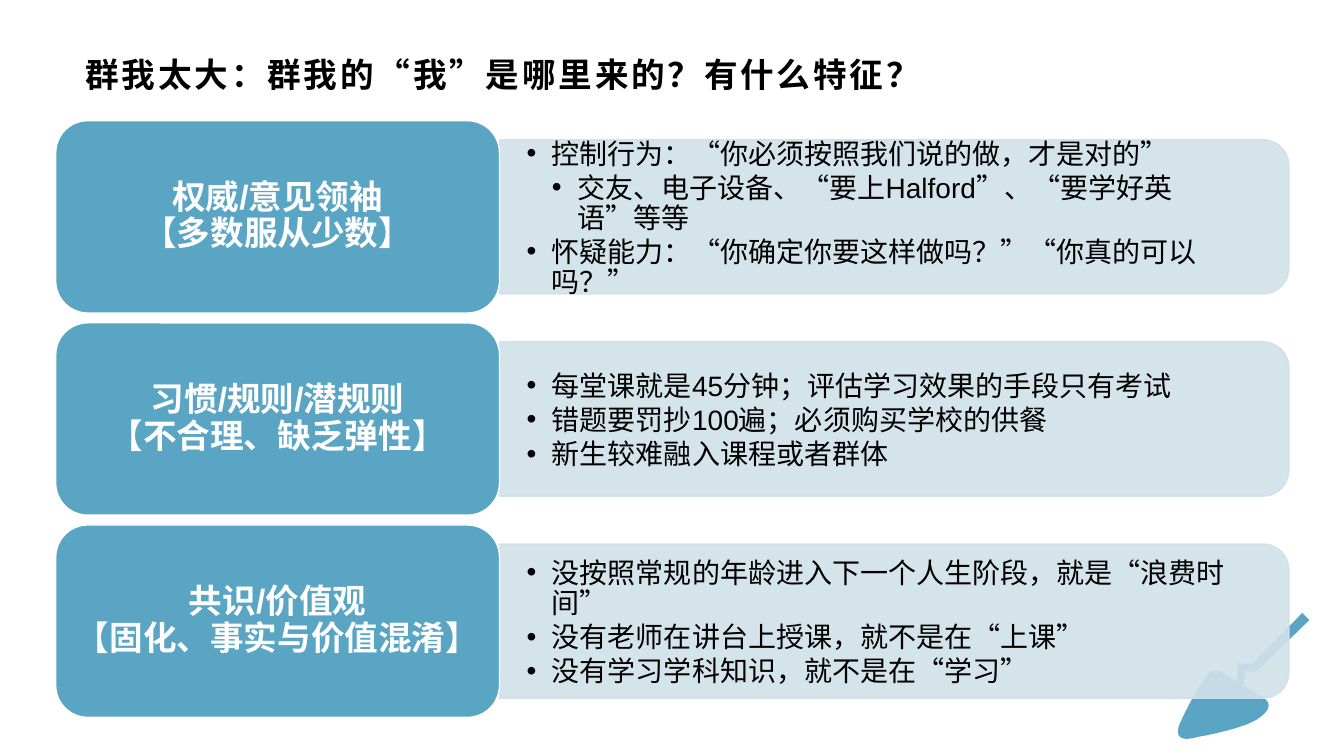
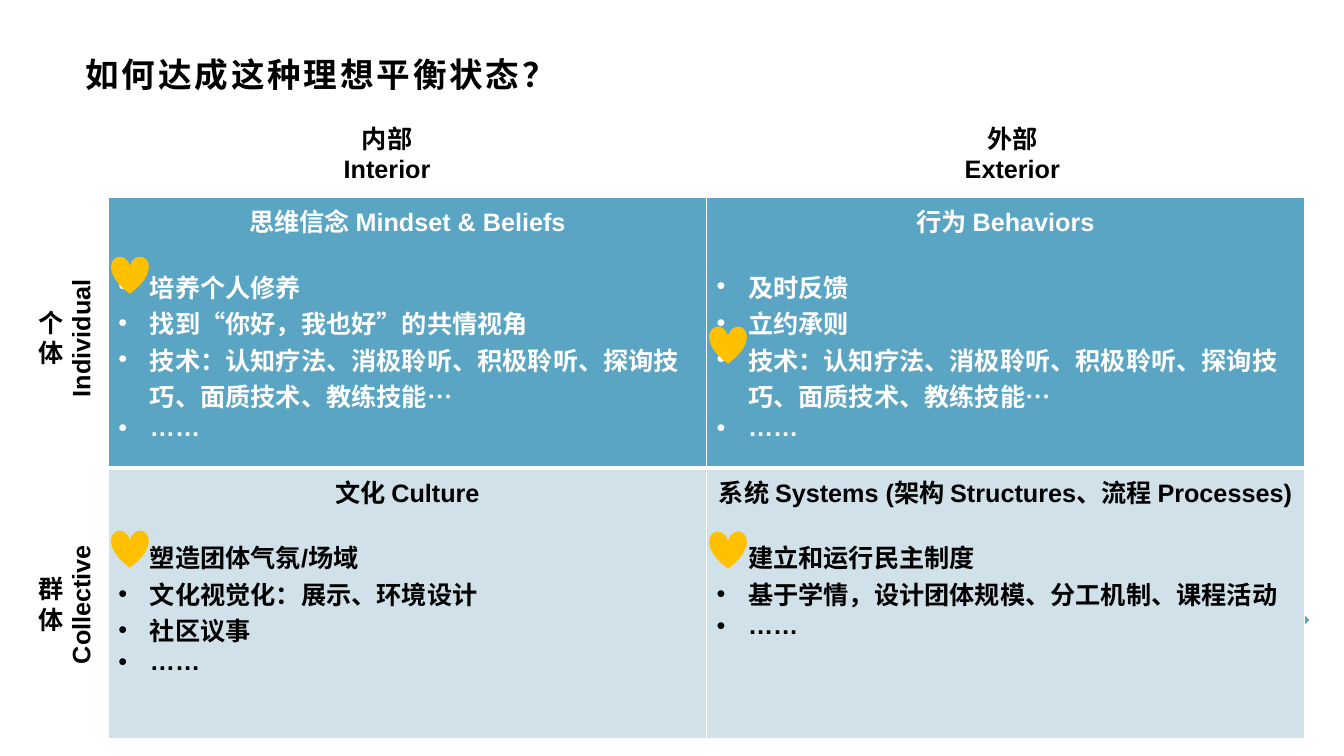
from dataclasses import dataclass
from lxml import etree
from pptx import Presentation
from pptx.dml.color import RGBColor
from pptx.enum.shapes import MSO_SHAPE
from pptx.enum.text import MSO_ANCHOR, MSO_AUTO_SIZE, PP_ALIGN
from pptx.oxml.ns import qn
from pptx.util import Pt

ROUND, PANEL, HEART = (MSO_SHAPE.ROUNDED_RECTANGLE,
                       MSO_SHAPE.ROUND_2_SAME_RECTANGLE, MSO_SHAPE.HEART)
MID, TOP = MSO_ANCHOR.MIDDLE, MSO_ANCHOR.TOP
LEFT, CENTER = PP_ALIGN.LEFT, PP_ALIGN.CENTER
FIXED = MSO_AUTO_SIZE.NONE


@dataclass(frozen=True)
class Theme:
    font: str = "Arial"
    lang: str = "zh-CN"
    blue: str = "59A5C3"
    pale: str = "D1E1E9"
    gold: str = "FFC000"
    white: str = "FFFFFF"
    black: str = "000000"
    head: int = 24
    body: int = 20
    cell: int = 18


T = Theme()

SOURCES = {
    "title": "群我太大：群我的“我”是哪里来的？有什么特征？",
    "rows": [
        ("权威/意见领袖\v【多数服从少数】", [
            (1, "控制行为：“你必须按照我们说的做，才是对的”"),
            (2, "交友、电子设备、“要上Halford”、“要学好英语”等等"),
            (1, "怀疑能力：“你确定你要这样做吗？”“你真的可以吗？”")]),
        ("习惯/规则/潜规则\v【不合理、缺乏弹性】", [
            (1, "每堂课就是45分钟；评估学习效果的手段只有考试"),
            (1, "错题要罚抄100遍；必须购买学校的供餐"),
            (1, "新生较难融入课程或者群体")]),
        ("共识/价值观\v【固化、事实与价值混淆】", [
            (1, "没按照常规的年龄进入下一个人生阶段，就是“浪费时间”"),
            (1, "没有老师在讲台上授课，就不是在“上课”"),
            (1, "没有学习学科知识，就不是在“学习”")]),
    ],
}

SKILLS = "技术：认知疗法、消极聆听、积极聆听、探询技巧、面质技术、教练技能…"
BALANCE = {
    "title": "如何达成这种理想平衡状态？",
    "cols": [("内部", "Interior"), ("外部", "Exterior")],
    "rows": [("个", "体", "Individual"), ("群", "体", "Collective")],
    "cells": [
        [("思维信念 Mindset & Beliefs",
          ["培养个人修养", "找到“你好，我也好”的共情视角", SKILLS, "……"]),
         ("行为 Behaviors",
          ["及时反馈", "立约承则", SKILLS, "……"])],
        [("文化 Culture",
          ["塑造团体气氛/场域", "文化视觉化：展示、环境设计", "社区议事", "……"]),
         ("系统 Systems (架构 Structures、流程 Processes)",
          ["建立和运行民主制度", "基于学情，设计团体规模、分工机制、课程活动", "……"])],
    ],
    "hearts": [(183, 233), (378.7, 379.4)],
}

# Each blade step is (control, end); a step without control is straight.
START = (859.7, 486)
BLADE = [((850.3, 499.7), (843.1, 516.2)), ((834.5, 532.8), (856.1, 526.3)),
         ((890.6, 520.6), (900.7, 511.9)), ((913, 503.3), (900.7, 497.5)),
         (None, (872.6, 480.2)), ((865.4, 475.2), START)]
HANDLE = [(883.4, 486.7), (884.2, 473.8), (894.2, 474.5), (930.2, 437.8),
          (935.3, 442.8), (897.8, 479.5), (889.2, 479.5), (888.5, 489.6)]


def rgb(hue):
    return RGBColor.from_string(hue)


def assign(item, values):
    for key, value in values.items():
        setattr(item, key, value)


def paint(shape, hue, line=None, alpha=None):
    shape.shadow.inherit = False
    shape.fill.solid()
    shape.fill.fore_color.rgb = rgb(hue)
    if line:
        shape.line.color.rgb = rgb(line)
        shape.line.width = Pt(1)
    else:
        shape.line.fill.background()
    if alpha:
        for node in shape._element.spPr.iter(qn("a:srgbClr")):
            etree.SubElement(node, qn("a:alpha")).set("val", str(alpha * 1000))


def style(para, size, hue, bold=False, track=0, east=True):
    """Format all runs; east gives East Asian script the same font."""
    for run in para.runs:
        assign(run.font, {"name": T.font, "size": Pt(size), "bold": bold})
        run.font.color.rgb = rgb(hue)
        props = run._r.get_or_add_rPr()
        props.set("lang", T.lang)
        if track:
            props.set("spc", str(track * 100))
        if east:
            etree.SubElement(props, qn("a:ea")).set("typeface", T.font)


def bullet(para, left, hang):
    props = para._p.get_or_add_pPr()
    props.set("marL", str(Pt(left)))
    props.set("indent", str(-Pt(hang)))
    etree.SubElement(props, qn("a:buFont")).set("typeface", T.font)
    etree.SubElement(props, qn("a:buChar")).set("char", "•")


def write(frame, lines, look, **form):
    """Write one paragraph per line and return the paragraphs."""
    paras = []
    for i, line in enumerate(lines):
        para = frame.add_paragraph() if i else frame.paragraphs[0]
        para.text = line
        assign(para, form)
        style(para, **look)
        paras.append(para)
    return paras


def setup(frame, pad=(7.2, 3.6), anchor=TOP):
    x, y = map(Pt, pad)
    assign(frame, {"word_wrap": True, "auto_size": FIXED,
                   "vertical_anchor": anchor, "margin_left": x,
                   "margin_right": x, "margin_top": y, "margin_bottom": y})


def shape(slide, kind, x, y, w, h):
    return slide.shapes.add_shape(kind, Pt(x), Pt(y), Pt(w), Pt(h))


def box(slide, x, y, w, h, **form):
    item = slide.shapes.add_textbox(Pt(x), Pt(y), Pt(w), Pt(h))
    setup(item.text_frame, **form)
    return item


def outline(slide, points):
    first, *rest = [(Pt(x), Pt(y)) for x, y in points]
    pen = slide.shapes.build_freeform(*first, scale=1.0)
    pen.add_line_segments(rest, close=True)
    paint(pen.convert_to_shape(), T.blue)


def curve(start, steps, count=12):
    """Sample cubic curves whose first control is their own start."""
    points = [start]
    for ctrl, end in steps:
        if ctrl is None:
            points.append(end)
            continue
        a = points[-1]
        for i in range(1, count + 1):
            t = i / count
            u = 1 - t
            k = u ** 3 + 3 * u * u * t
            points.append(tuple(k * p + 3 * u * t * t * c + t ** 3 * e
                                for p, c, e in zip(a, ctrl, end)))
    return points


def begin(deck, title):
    """Add a slide with the shared trowel and title."""
    slide = deck.slides.add_slide(deck.slide_layouts[5])
    outline(slide, curve(START, BLADE))
    outline(slide, HANDLE)
    head = slide.shapes.title
    assign(head, {"left": Pt(52.6), "top": Pt(34.6),
                  "width": Pt(854.6), "height": Pt(34.6)})
    setup(head.text_frame, (8.5, 1.5), MID)
    look = {"size": T.head, "hue": T.black, "bold": True, "track": 2,
            "east": False}
    write(head.text_frame, [title], look, alignment=LEFT,
          line_spacing=Pt(31))
    return slide


def sources(deck):
    slide = begin(deck, SOURCES["title"])
    x, top, wide, high, pitch = 39.8, 86.2, 317, 137.4, 144.4
    edge, span, deep, room = x + wide, 563.8, 110.2, 99.4
    for i, (label, points) in enumerate(SOURCES["rows"]):
        y = top + i * pitch
        mid = y + high / 2
        panel = shape(slide, PANEL, edge + (span - deep) / 2, mid - span / 2,
                      deep, span)
        panel.rotation = 90
        paint(panel, T.pale, T.pale, 90)

        text = box(slide, edge, mid - room / 2 + 1.5, 558.7, room,
                   pad=(19.4, 9.6), anchor=MID).text_frame
        paras = write(text, [line for _, line in points],
                      {"size": T.body, "hue": T.black, "east": False},
                      alignment=LEFT, line_spacing=Pt(21.4),
                      space_after=Pt(3))
        for para, (level, _) in zip(paras, points):
            bullet(para, 18 * level, 18)

        card = shape(slide, ROUND, x, y, wide, high)
        paint(card, T.blue, T.white)
        setup(card.text_frame, anchor=MID)
        write(card.text_frame, [label],
              {"size": T.head, "hue": T.white, "bold": True},
              alignment=CENTER, line_spacing=0.9)


def border(cell, widths):
    """Set white cell borders, given as left, right, top, bottom."""
    props = cell._tc.get_or_add_tcPr()
    for i, (side, width) in enumerate(zip("LRTB", widths)):
        line = etree.Element(qn("a:ln" + side), w=str(Pt(width)))
        ink = etree.SubElement(line, qn("a:solidFill"))
        etree.SubElement(ink, qn("a:srgbClr")).set("val", T.white)
        props.insert(i, line)


def fill(cell, hue, ink, head, points):
    cell.fill.solid()
    cell.fill.fore_color.rgb = rgb(hue)
    look = {"size": T.cell, "hue": ink, "bold": True, "east": False}
    first, *rest = write(cell.text_frame, [head, *points], look)
    assign(first, {"alignment": CENTER, "space_after": Pt(20.7)})
    for para in rest:
        bullet(para, 22.5, 22.5)


def balance(deck):
    slide = begin(deck, BALANCE["title"])
    x, y, wide, high = 77.4, 141, 427.2, 193.4
    grid = slide.shapes.add_table(2, 2, Pt(x), Pt(y), Pt(2 * wide),
                                  Pt(2 * high)).table
    grid.horz_banding = False
    looks = [(T.blue, T.white, (1, 1, 1, 3)), (T.pale, T.black, (1, 1, 3, 1))]
    for r, (row, (hue, ink, edges)) in enumerate(zip(BALANCE["cells"], looks)):
        grid.rows[r].height = Pt(high)
        for c, (head, points) in enumerate(row):
            grid.columns[c].width = Pt(wide)
            fill(grid.cell(r, c), hue, ink, head, points)
            border(grid.cell(r, c), edges)

    look = {"size": T.cell, "hue": T.black, "bold": True}
    for i, (*chars, name) in enumerate(BALANCE["rows"]):
        mid = 241.6 + i * 190.2
        for lines, left, w, h, turn in [(chars, 20.2, 28, 51, 0),
                                        ([name], 7.9, 99.4, 29, 270)]:
            tag = box(slide, left, mid - h / 2, w, h)
            tag.rotation = turn
            write(tag.text_frame, lines, look, alignment=CENTER)
    for i, lines in enumerate(BALANCE["cols"]):
        tag = box(slide, 226.8 + i * 446.6, 84.2, 99.4, 51)
        write(tag.text_frame, lines, look, alignment=CENTER)
    for row in BALANCE["hearts"]:
        for c, top in enumerate(row):
            paint(shape(slide, HEART, x + 2 + c * wide, top, 26.8, 26.8),
                  T.gold)


def main():
    deck = Presentation()
    assign(deck, {"slide_width": Pt(960), "slide_height": Pt(540)})
    sources(deck)
    balance(deck)
    deck.save("out.pptx")


if __name__ == "__main__":
    main()
